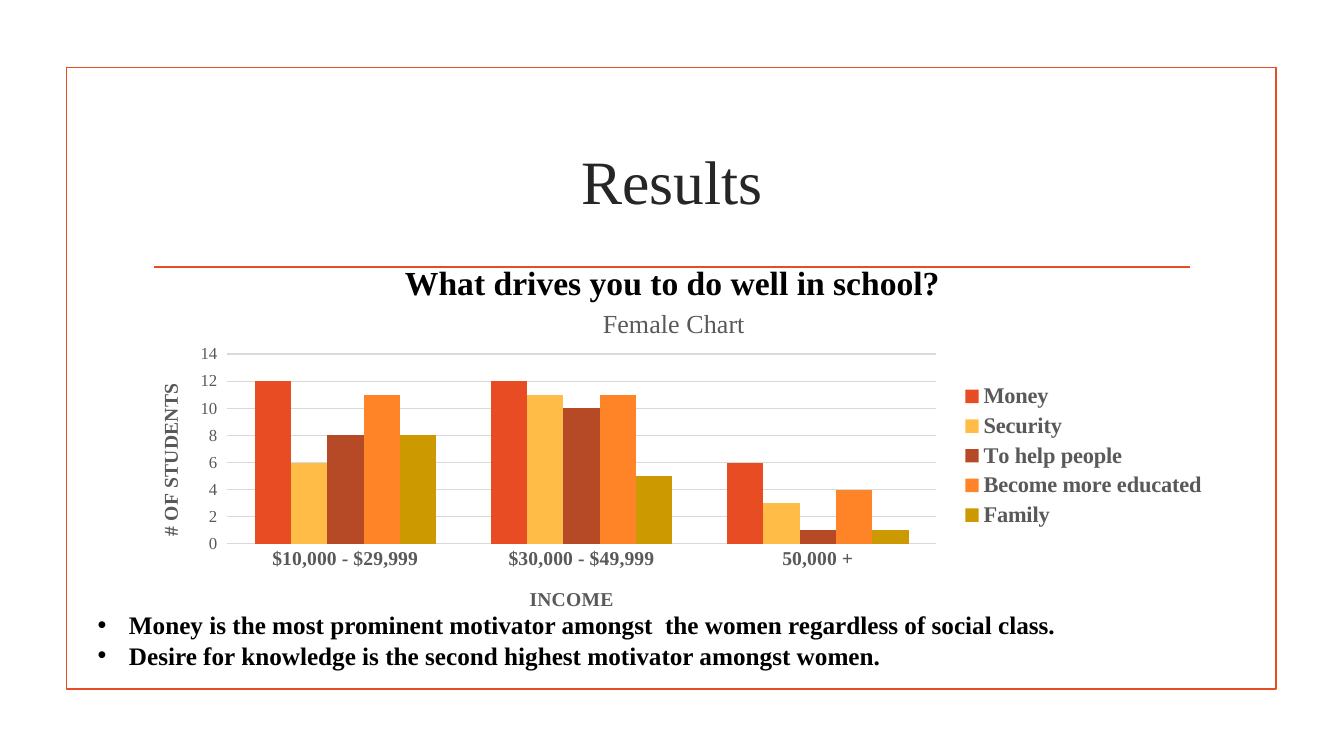
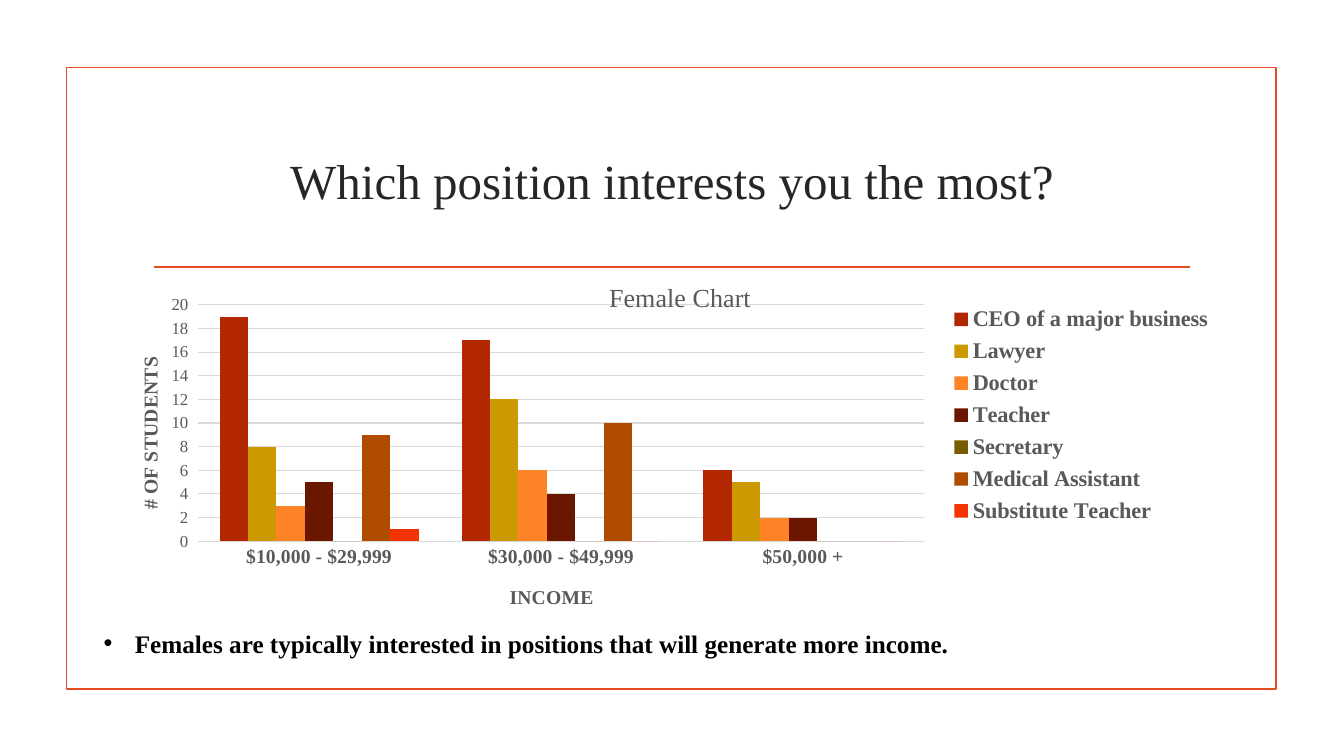
from lxml.etree import SubElement
from pptx import Presentation
from pptx.chart.data import CategoryChartData
from pptx.dml.color import RGBColor
from pptx.enum.chart import XL_CHART_TYPE as ChartType, XL_LEGEND_POSITION as LegendPosition
from pptx.enum.chart import XL_TICK_MARK as TickMark
from pptx.enum.shapes import MSO_CONNECTOR as Connector, MSO_SHAPE as Shape
from pptx.enum.text import MSO_ANCHOR as Anchor, PP_ALIGN as Align
from pptx.oxml import parse_xml
from pptx.oxml.ns import nsdecls, qn
from pptx.util import Cm, Pt

FONT = "Times New Roman"
ACCENT, INK, BLACK = "E84C22", "262626", "000000"
CHART_TEXT, CHART_LINE = "595959", "D9D9D9"
INDENT = Cm(0.79)


def color(hex_string):
    return RGBColor.from_string(hex_string)


def style_font(font, size, hex_string, bold=False):
    font.name, font.size, font.bold = FONT, Pt(size), bold
    font.color.rgb = color(hex_string)


def style_line(line, hex_string, width):
    line.color.rgb = color(hex_string)
    line.width = Pt(width)


def place(element, index, x, y, width=None, height=None, inner=False):
    """Give a chart part a fixed place, in fractions of the chart."""
    for old in element.findall(qn("c:layout")):
        element.remove(old)
    layout = parse_xml(f"<c:layout {nsdecls('c')}><c:manualLayout/></c:layout>")
    settings = [("layoutTarget", "inner")] if inner else []
    settings += [("xMode", "edge"), ("yMode", "edge"), ("x", x), ("y", y)]
    if width:
        settings += [("w", width), ("h", height)]
    for name, value in settings:
        SubElement(layout[0], qn(f"c:{name}")).set("val", str(value))
    element.insert(index, layout)


def set_chart_title(title, text, size, position, bold=True):
    title.text_frame.text = text
    style_font(title.text_frame.paragraphs[0].runs[0].font, size, CHART_TEXT, bold)
    place(title._element, 1, *position)


class Deck:
    """Holds the shared style and the slide being built."""

    def __init__(self):
        self.presentation = Presentation()
        self.presentation.slide_width = Cm(33.87)
        self.presentation.slide_height = Cm(19.05)
        self.slide = None

    def add_slide(self, title, title_size):
        self.slide = self.presentation.slides.add_slide(self.presentation.slide_layouts[6])
        self.add_frame()
        self.add_rule()
        self.add_text((3.61, 2.72, 26.67, 3.63), [title], title_size, INK,
                      bold=False, align=Align.CENTER, anchor=Anchor.MIDDLE)

    def add_frame(self):
        frame = self.slide.shapes.add_shape(
            Shape.RECTANGLE, Cm(1.68), Cm(1.7), Cm(30.48), Cm(15.67))
        frame.shadow.inherit = False
        frame.fill.background()
        style_line(frame.line, ACCENT, 1.25)

    def add_rule(self):
        rule = self.slide.shapes.add_connector(
            Connector.STRAIGHT, Cm(3.89), Cm(6.73), Cm(30), Cm(6.73))
        style_line(rule.line, ACCENT, 1.25)
        SubElement(rule._element.spPr, qn("a:effectLst"))

    def add_text(self, box, lines, size, hex_string=BLACK, bold=True,
                 align=Align.LEFT, anchor=Anchor.TOP, bullets=False):
        frame = self.slide.shapes.add_textbox(*map(Cm, box)).text_frame
        frame.word_wrap = True
        frame.vertical_anchor = anchor
        frame.text = "\n".join(lines)
        for paragraph in frame.paragraphs:
            paragraph.alignment = align
            if bullets:
                properties = paragraph._p.get_or_add_pPr()
                properties.set("marL", str(INDENT))
                properties.set("indent", str(-INDENT))
                SubElement(properties, qn("a:buFont")).set("typeface", "Arial")
                SubElement(properties, qn("a:buChar")).set("char", "•")
            style_font(paragraph.runs[0].font, size, hex_string, bold)

    def add_bullets(self, box, lines):
        self.add_text(box, lines, 18, bullets=True)

    def add_income_chart(self, box, categories, series_rows, maximum, places):
        """Draw columns by income; each series row is name, colour, values."""
        data = CategoryChartData()
        data.categories = categories
        for name, _, values in series_rows:
            data.add_series(name, values)
        chart = self.slide.shapes.add_chart(
            ChartType.COLUMN_CLUSTERED, *map(Cm, box), data).chart
        style_font(chart.font, 10, BLACK)

        plot = chart.plots[0]
        plot.gap_width, plot.overlap = 150, 0
        plot.vary_by_categories = False
        for series, (_, fill, _) in zip(plot.series, series_rows):
            series.format.fill.solid()
            series.format.fill.fore_color.rgb = color(fill)
            series.invert_if_negative = False
        place(chart._chartSpace.chart.plotArea, 0, *places["plot"], inner=True)

        chart.has_title = True
        set_chart_title(chart.chart_title, "Female Chart", 18.6, places["title"], bold=False)
        self.style_axes(chart, maximum, places)

        chart.has_legend = True
        chart.legend.position = LegendPosition.RIGHT
        chart.legend.include_in_layout = False
        style_font(chart.legend.font, 16, CHART_TEXT, bold=True)
        if "legend" in places:
            place(chart.legend._element, 1, *places["legend"])

    def style_axes(self, chart, maximum, places):
        income, students = chart.category_axis, chart.value_axis
        style_font(income.tick_labels.font, 14, CHART_TEXT, bold=True)
        income.major_tick_mark = TickMark.NONE
        style_line(income.format.line, CHART_LINE, 0.75)
        set_chart_title(income.axis_title, "INCOME", 14, places["income"])

        style_font(students.tick_labels.font, 12, CHART_TEXT)
        students.minimum_scale, students.maximum_scale = 0, maximum
        students.major_unit = 2
        students.format.line.fill.background()
        style_line(students.major_gridlines.format.line, CHART_LINE, 0.75)
        set_chart_title(students.axis_title, "# OF STUDENTS", 14, places["students"])
        body = students.axis_title.text_frame._txBody.bodyPr
        body.set("rot", "-5400000")
        body.set("vert", "horz")


def add_motivation_slide(deck):
    deck.add_slide("Results", 44)
    deck.add_income_chart(
        (3.2, 7.14, 27.48, 8.69),
        ["$10,000 - $29,999", "$30,000 - $49,999", "50,000 +"],
        [("Money", "E84C22", (12, 12, 6)),
         ("Security", "FFBD47", (6, 11, 3)),
         ("To help people", "B64926", (8, 10, 1)),
         ("Become more educated", "FF8427", (11, 11, 4)),
         ("Family", "CC9900", (8, 5, 1))],
        14,
        {"plot": (0.092, 0.205, 0.65, 0.551), "title": (0.432, 0.055),
         "income": (0.366, 0.868), "students": (0.025, 0.28)})
    deck.add_text((3.84, 6.48, 26.21, 1.27), ["What drives you to do well in school?"],
                  24, align=Align.CENTER)
    deck.add_bullets((2.21, 15.24, 30.35, 1.8), [
        "Money is the most prominent motivator amongst  the women regardless of social class.",
        "Desire for knowledge is the second highest motivator amongst women."])


def add_position_slide(deck):
    deck.add_slide("Which position interests you the most?", 35)
    deck.add_income_chart(
        (3.18, 6.81, 27.51, 9.37),
        ["$10,000 - $29,999", "$30,000 - $49,999", "$50,000 +"],
        [("CEO of a major business", "B22600", (19, 17, 6)),
         ("Lawyer", "CC9900", (8, 12, 5)),
         ("Doctor", "FF8427", (3, 6, 2)),
         ("Teacher", "6B1700", (5, 4, 2)),
         ("Secretary", "7A5C00", (0, 0, 0)),
         ("Medical Assistant", "B04C00", (9, 10, 0)),
         ("Substitute Teacher", "F43400", (1, 0, 0))],
        20,
        {"plot": (0.066, 0.093, 0.665, 0.636), "title": (0.438, 0.018),
         "income": (0.348, 0.835), "students": (0.007, 0.223),
         "legend": (0.75, 0.08, 0.25, 0.62)})
    deck.add_bullets((2.36, 15.7, 26.67, 1.02), [
        "Females are typically interested in positions that will generate more income."])


def main():
    deck = Deck()
    add_motivation_slide(deck)
    add_position_slide(deck)
    deck.presentation.save("out.pptx")


if __name__ == "__main__":
    main()
